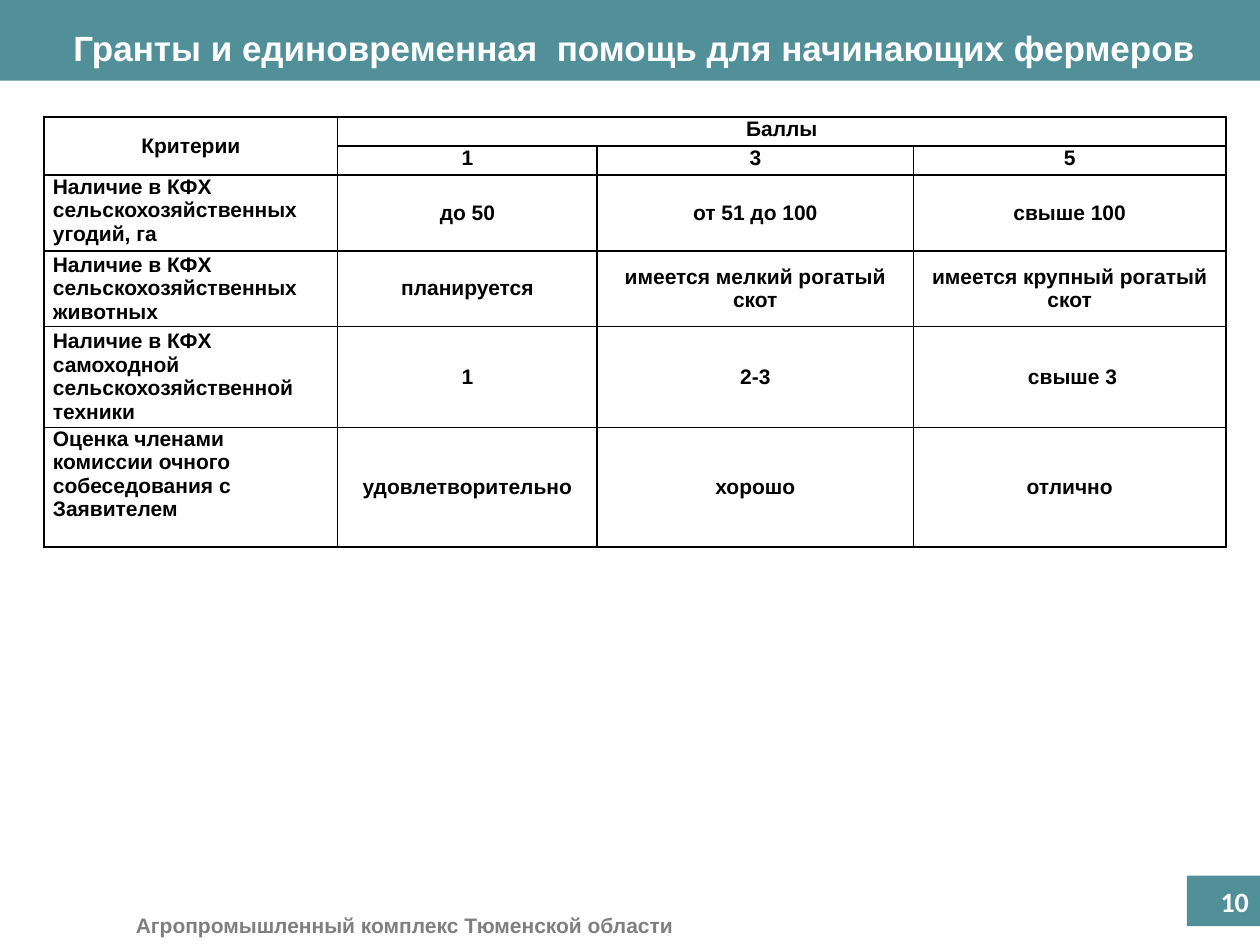
from lxml import etree
from pptx import Presentation
from pptx import util as u
from pptx.dml import color
from pptx.enum import shapes, text
from pptx.oxml import ns

TEAL, WHITE, BLACK, GREY = "519099", "FFFFFF", "000000", "7F7F7F"
LEFT, MID, RIGHT = text.PP_ALIGN.LEFT, text.PP_ALIGN.CENTER, text.PP_ALIGN.RIGHT
TOP, HALF = text.MSO_ANCHOR.TOP, text.MSO_ANCHOR.MIDDLE

COLS = [2.33, 2.06, 2.51, 2.48]
ROWS = [0.23, 0.23, 0.6, 0.6, 0.8, 0.95]
CELLS = [
    ["Критерии", "Баллы", "", ""],
    ["", "1", "3", "5"],
    ["Наличие в КФХ сельскохозяйственных угодий, га",
     "до 50", "от 51 до 100", "свыше 100"],
    ["Наличие в КФХ сельскохозяйственных животных",
     "планируется", "имеется мелкий рогатый скот", "имеется крупный рогатый скот"],
    ["Наличие в КФХ самоходной сельскохозяйственной техники",
     "1", "2-3", " свыше 3"],
    ["Оценка членами комиссии очного собеседования с Заявителем",
     "удовлетворительно", "хорошо", "отлично"],
]
SPANS = [(0, 0, 1, 0), (0, 1, 0, 3)]
HIGH = {(0, 1), (1, 1), (1, 2), (1, 3), (2, 0), (5, 0)}


def rgb(code):
    return color.RGBColor.from_string(code)


def write(frame, words, size=12, font="Arial", ink=BLACK, align=LEFT):
    para = frame.paragraphs[0]
    para.alignment = align
    run = para.add_run()
    run.text = words
    run.font.size = u.Pt(size)
    run.font.name = font
    run.font.bold = True
    run.font.color.rgb = rgb(ink)


def edge(cell, ink=BLACK, width=1):
    props = cell._tc.get_or_add_tcPr()
    for side in ("lnL", "lnR", "lnT", "lnB"):
        line = etree.SubElement(props, ns.qn("a:" + side), w=str(u.Pt(width)))
        fill = etree.SubElement(line, ns.qn("a:solidFill"))
        etree.SubElement(fill, ns.qn("a:srgbClr"), val=ink)


class Page:
    def __init__(self, deck):
        self.slide = deck.slides.add_slide(deck.slide_layouts[5])

    def bar(self, *box):
        shape = self.slide.shapes.add_shape(
            shapes.MSO_SHAPE.RECTANGLE, *map(u.Inches, box))
        shape.shadow.inherit = False
        shape.fill.solid()
        shape.fill.fore_color.rgb = rgb(TEAL)
        shape.line.fill.background()

    def title(self, words, *box):
        shape = self.slide.shapes.title
        shape.left, shape.top, shape.width, shape.height = map(u.Inches, box)
        frame = shape.text_frame
        frame.vertical_anchor = TOP
        frame.auto_size = text.MSO_AUTO_SIZE.SHAPE_TO_FIT_TEXT
        write(frame, words, size=20, ink=WHITE, align=MID)
        tree = shape._element.getparent()
        tree.append(shape._element)

    def label(self, words, *box, wrap=True, anchor=TOP, **style):
        frame = self.slide.shapes.add_textbox(*map(u.Inches, box)).text_frame
        frame.word_wrap = wrap
        frame.vertical_anchor = anchor
        write(frame, words, **style)

    def table(self, left, top):
        box = map(u.Inches, (left, top, sum(COLS), sum(ROWS)))
        grid = self.slide.shapes.add_table(len(ROWS), len(COLS), *box).table
        grid.first_row = grid.horz_banding = False
        for col, width in zip(grid.columns, COLS):
            col.width = u.Inches(width)
        for row, height in zip(grid.rows, ROWS):
            row.height = u.Inches(height)
        for r, line in enumerate(CELLS):
            for c, words in enumerate(line):
                cell = grid.cell(r, c)
                cell.margin_left = cell.margin_right = u.Inches(0.07)
                cell.margin_top = cell.margin_bottom = 0
                cell.vertical_anchor = TOP if (r, c) in HIGH else HALF
                edge(cell)
                cell.fill.background()
                if words:
                    align = LEFT if c == 0 and r > 1 else MID
                    write(cell.text_frame, words, align=align)
        for r, c, end, last in SPANS:
            grid.cell(r, c).merge(grid.cell(end, last or c))


def main():
    deck = Presentation()
    deck.slide_width, deck.slide_height = u.Inches(10), u.Inches(7.5)
    page = Page(deck)
    page.bar(0, 0, 10, 0.64)
    page.bar(9.42, 6.95, 0.58, 0.4)
    page.label("Агропромышленный комплекс Тюменской области",
               0.98, 7.19, 4.51, 0.3, wrap=False, ink=GREY)
    page.label("10", 7.68, 6.95, 2.33, 0.4, anchor=HALF,
               size=16, font="Calibri", ink=WHITE, align=RIGHT)
    page.title("Гранты и единовременная  помощь для начинающих фермеров",
               0.31, 0.16, 9.45, 0.44)
    page.table(0.35, 0.93)
    deck.save("out.pptx")


if __name__ == "__main__":
    main()
